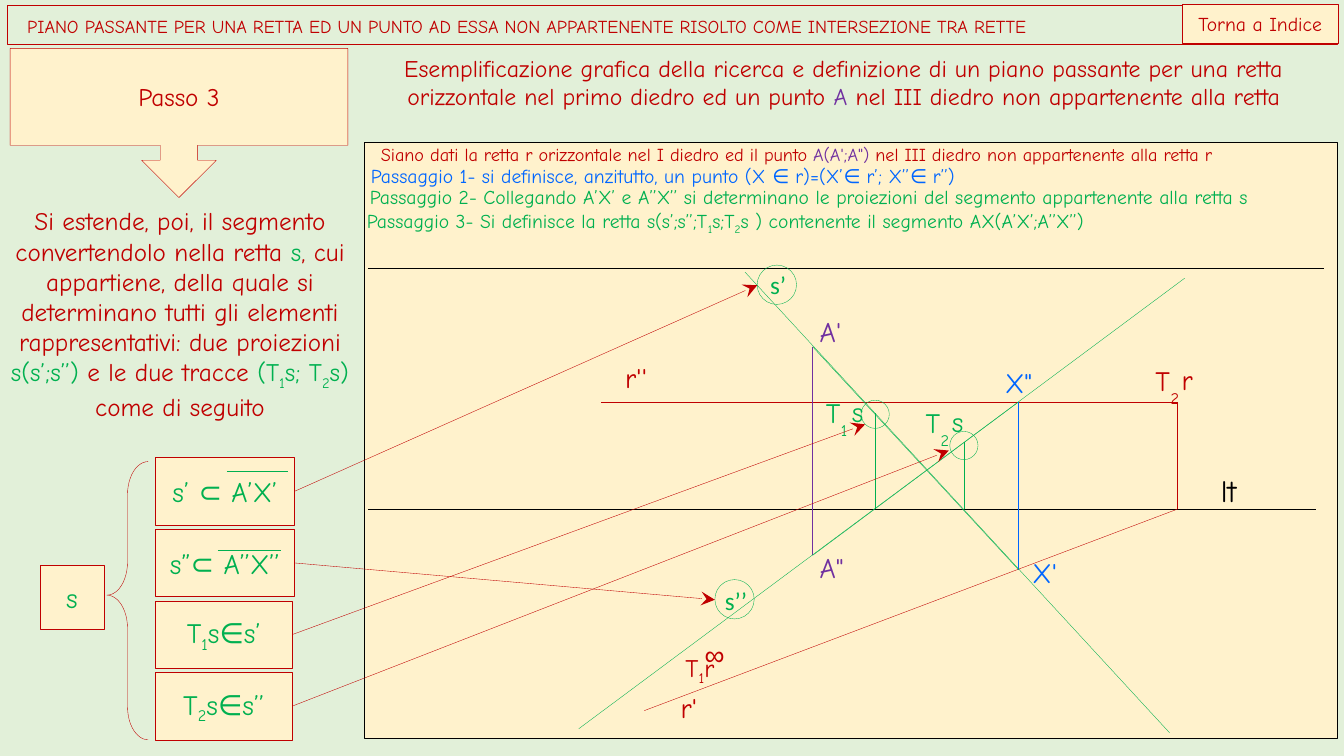
"""Build the slide on step 3 of the plane through a line and an external point."""
from dataclasses import dataclass

from lxml import etree
from pptx import Presentation
from pptx.dml.color import RGBColor
from pptx.enum.shapes import MSO_CONNECTOR, MSO_SHAPE
from pptx.enum.text import MSO_ANCHOR, MSO_AUTO_SIZE, PP_ALIGN
from pptx.oxml.ns import qn
from pptx.shapes.autoshape import Shape
from pptx.shapes.connector import Connector
from pptx.slide import Slide
from pptx.text.text import TextFrame
from pptx.util import Inches, Pt

RECTANGLE, ELLIPSE = MSO_SHAPE.RECTANGLE, MSO_SHAPE.OVAL
CALLOUT, BRACE = MSO_SHAPE.DOWN_ARROW_CALLOUT, MSO_SHAPE.LEFT_BRACE
STRAIGHT = MSO_CONNECTOR.STRAIGHT
LEFT, CENTER = PP_ALIGN.LEFT, PP_ALIGN.CENTER
MIDDLE, TOP = MSO_ANCHOR.MIDDLE, MSO_ANCHOR.TOP
NO_FIT, GROW = MSO_AUTO_SIZE.NONE, MSO_AUTO_SIZE.SHAPE_TO_FIT_TEXT
RIGHT_SIDE = 3


@dataclass(frozen=True)
class Theme:
    background: str = "E2F0D9"
    cream: str = "FFF2CC"
    red: str = "C00000"
    green: str = "00B050"
    purple: str = "7030A0"
    blue: str = "0066FF"
    black: str = "000000"
    font: str = "Comic Neue"
    circle_font: str = "Calibri"
    symbol_font: str = "Arial"
    heading: int = 13
    step: int = 14
    intro: int = 17
    body: int = 18
    label: int = 20
    ground: int = 22
    thin: float = 0.25
    overline: float = 0.5


THEME = Theme()


@dataclass(frozen=True)
class Run:
    text: str
    color: str
    subscript: bool = False


@dataclass(frozen=True)
class Text:
    left: float
    top: float
    width: float
    height: float
    runs: tuple[Run, ...]
    size: int
    align: PP_ALIGN = LEFT
    font: str = THEME.font


@dataclass(frozen=True)
class Label:
    left: float
    top: float
    width: float
    run: Run
    size: int = THEME.label
    font: str = THEME.font


@dataclass(frozen=True)
class Box:
    left: float
    top: float
    width: float
    height: float
    runs: tuple[Run, ...] = ()
    size: int = THEME.label
    kind: MSO_SHAPE = RECTANGLE
    fill: str | None = THEME.cream
    line: str = THEME.red
    space_after: int = 0


@dataclass(frozen=True)
class Line:
    start: tuple[float, float]
    end: tuple[float, float]
    color: str
    weight: float = THEME.thin


def indexed(pattern: str, color: str) -> tuple[Run, ...]:
    """Split text into runs, with the parts between underscores set as subscripts."""
    return tuple(Run(part, color, index % 2 == 1) for index, part in enumerate(pattern.split("_")))


def write_runs(frame: TextFrame, runs: tuple[Run, ...], size: int, font: str, align: PP_ALIGN) -> None:
    """Write the runs into the first paragraph of a frame."""
    paragraph = frame.paragraphs[0]
    paragraph.alignment = align
    for item in runs:
        run = paragraph.add_run()
        run.text = item.text
        run.font.size = Pt(size)
        run.font.name = font
        run.font.color.rgb = RGBColor.from_string(item.color)
        if item.subscript:
            run.font._element.set("baseline", "-25000")


def add_text(slide: Slide, text: Text) -> None:
    """Add a wrapping text box."""
    shape = slide.shapes.add_textbox(*map(Inches, (text.left, text.top, text.width, text.height)))
    frame = shape.text_frame
    frame.word_wrap = True
    frame.auto_size = GROW
    write_runs(frame, text.runs, text.size, text.font, text.align)


def add_label(slide: Slide, label: Label) -> None:
    """Add a short label without margins."""
    shape = slide.shapes.add_textbox(*map(Inches, (label.left, label.top, label.width, 0.34)))
    frame = shape.text_frame
    frame.margin_left = frame.margin_right = frame.margin_top = frame.margin_bottom = 0
    frame.word_wrap = False
    frame.auto_size = GROW
    frame.vertical_anchor = TOP
    write_runs(frame, (label.run,), label.size, label.font, LEFT)


def add_trace(slide: Slide, left: float, top: float, index: str, name: str, color: str) -> None:
    """Add a trace label made of T, a lowered index and the line name."""
    add_label(slide, Label(left, top, 0.19, Run("T", color)))
    add_label(slide, Label(left + 0.15, top + 0.06, 0.1, Run(index, color, True)))
    add_label(slide, Label(left + 0.26, top - 0.01, 0.14, Run(name, color)))


def outline(shape: Shape, fill: str | None, line: str) -> None:
    """Give a shape its fill and thin line."""
    if fill:
        shape.fill.solid()
        shape.fill.fore_color.rgb = RGBColor.from_string(fill)
    else:
        shape.fill.background()
    shape.line.color.rgb = RGBColor.from_string(line)
    shape.line.width = Pt(THEME.thin)


def add_box(slide: Slide, box: Box) -> Shape:
    """Add an outlined preset shape with centred text."""
    shape = slide.shapes.add_shape(box.kind, *map(Inches, (box.left, box.top, box.width, box.height)))
    shape.shadow.inherit = False
    outline(shape, box.fill, box.line)
    if box.runs:
        shape.text_frame.word_wrap = True
        shape.text_frame.vertical_anchor = MIDDLE
        write_runs(shape.text_frame, box.runs, box.size, THEME.font, CENTER)
        shape.text_frame.paragraphs[0].space_after = Pt(box.space_after)
    return shape


def add_line(slide: Slide, line: Line) -> Connector:
    """Add a straight line without shadow."""
    connector = slide.shapes.add_connector(STRAIGHT, *map(Inches, (*line.start, *line.end)))
    connector.line.color.rgb = RGBColor.from_string(line.color)
    connector.line.width = Pt(line.weight)
    etree.SubElement(connector._element.spPr, qn("a:effectLst"))
    return connector


def add_arrow(slide: Slide, source: Shape, end: tuple[float, float]) -> None:
    """Add an arrow from the right side of a box."""
    connector = add_line(slide, Line((0, 0), end, THEME.red))
    connector.begin_connect(source, RIGHT_SIDE)
    etree.SubElement(connector.line._get_or_add_ln(), qn("a:tailEnd"), type="stealth", w="lg", len="lg")


def add_header(slide: Slide) -> None:
    """Format the title and add the index button and the introduction."""
    title = slide.shapes.title
    title.left, title.top, title.width, title.height = map(Inches, (0.07, 0.05, 13.19, 0.39))
    outline(title, None, THEME.red)
    frame = title.text_frame
    frame.auto_size = NO_FIT
    frame.word_wrap = True
    frame.vertical_anchor = MIDDLE
    frame.margin_left, frame.margin_top = Inches(0.2), Inches(0.1)
    heading = "PIANO PASSANTE PER UNA RETTA ED UN PUNTO AD ESSA NON APPARTENENTE RISOLTO COME INTERSEZIONE TRA RETTE"
    write_runs(frame, (Run(heading, THEME.red),), THEME.heading, THEME.font, LEFT)
    frame.paragraphs[0].line_spacing = 0.9
    add_box(slide, Box(11.73, 0.04, 1.54, 0.39, (Run("Torna a Indice", THEME.red),), THEME.step))
    add_text(slide, Text(3.45, 0.48, 9.84, 0.67, (
        Run("Esemplificazione grafica della ricerca e definizione di un piano passante per una retta "
            "orizzontale nel primo diedro ed un punto ", THEME.red),
        Run("A ", THEME.purple),
        Run("nel III diedro non appartenente alla retta", THEME.red)), THEME.intro, CENTER))


def add_explanation(slide: Slide) -> list[Shape]:
    """Add the left column and return its four property boxes."""
    red, green = THEME.red, THEME.green
    add_box(slide, Box(0.1, 0.48, 3.35, 1.48, (Run("Passo 3", red),), THEME.body, CALLOUT))
    add_text(slide, Text(0, 1.99, 3.57, 2.52, (
        Run("Si estende, poi, il segmento convertendolo nella retta ", red), Run("s", green),
        Run(", cui appartiene, della quale si determinano tutti gli elementi rappresentativi: due proiezioni ", red),
        Run("s(s’;s’’) ", green), Run("e le due tracce ", red),
        *indexed("(T_1_s; T_2_s) ", green), Run("come di seguito", red)), THEME.body, CENTER))
    add_box(slide, Box(0.4, 5.61, 0.63, 0.63, (Run("s", green),), space_after=10))
    brace = add_box(slide, Box(1.06, 4.58, 0.41, 2.76, kind=BRACE, fill=None))
    brace.adjustments[0], brace.adjustments[1] = 0.8, 0.48
    properties = (("s’ ⊂ A’X’", 1.38), ("s”⊂ A’’X’’", 1.38), ("T_1_s∈s’", 1.36), ("T_2_s∈s’’", 1.36))
    boxes = [add_box(slide, Box(1.54, 4.54 + 0.71 * row, width, 0.67, indexed(pattern, green), space_after=10))
             for row, (pattern, width) in enumerate(properties)]
    for left, right, height in ((2.25, 2.86, 4.68), (2.16, 2.79, 5.46)):
        add_line(slide, Line((left, height), (right, height), green, THEME.overline))
    return boxes


def add_drawing(slide: Slide) -> None:
    """Add the panel with its steps, projections, labels and circles."""
    red, green, purple, blue, black = THEME.red, THEME.green, THEME.purple, THEME.blue, THEME.black
    add_box(slide, Box(3.61, 1.41, 9.65, 5.91, line=black))
    a_first, a_second, x_first, x_second = (8.06, 3.44), (8.06, 5.51), (10.1, 5.65), (10.1, 3.99)
    corner, ground = (11.68, 3.99), (11.68, 5.05)
    for line in (
        Line((3.65, 2.66), (13.13, 2.66), black), Line((3.65, 5.05), (13.05, 5.05), black),
        Line(corner, ground, red), Line(corner, (5.96, 3.99), red), Line(ground, (6.39, 7.05), red),
        Line(a_second, a_first, purple), Line(x_second, x_first, blue),
        Line(a_first, x_first, green), Line(a_second, x_second, green),
        Line((7.39, 2.7), (11.6, 7.27), green), Line((5.74, 7.23), (11.75, 2.76), green),
        Line((8.68, 5.05), (8.68, 4.1), green), Line((9.56, 5.05), (9.56, 4.39), green),
    ):
        add_line(slide, line)
    for label in (
        Label(12.11, 4.68, 0.35, Run("lt", black), THEME.ground),
        Label(8.13, 3.12, 0.31, Run("A'", purple)), Label(8.13, 5.46, 0.32, Run('A"', purple)),
        Label(6.75, 6.85, 0.24, Run("r'", red)), Label(6.2, 3.58, 0.35, Run("r''", red)),
        Label(10.24, 5.51, 0.31, Run("X'", blue)), Label(9.97, 3.63, 0.32, Run('X"', blue)),
        Label(6.99, 6.32, 0.2, Run("∞", red), font=THEME.symbol_font),
    ):
        add_label(slide, label)
    add_trace(slide, 11.46, 3.61, "2", "r", red)
    add_trace(slide, 9.18, 4.02, "2", "s", green)
    add_trace(slide, 8.19, 3.92, "1", "s", green)
    given = (Run("Siano dati la retta r orizzontale nel I diedro ed il punto ", red), Run("A(A';A\") ", purple),
             Run("nel III diedro non appartenente alla retta r", red))
    first = "Passaggio 1- si definisce, anzitutto, un punto (X ∈ r)=(X’∈ r’; X’’∈ r’’)"
    second = "Passaggio 2- Collegando A’X’ e A’’X’’ si determinano le proiezioni del segmento appartenente alla retta s"
    third = "Passaggio 3- Si definisce la retta s(s’;s’’;T_1_s;T_2_s ) contenente il segmento AX(A’X’;A’’X’’)"
    for text in (
        Text(3.68, 1.37, 9.45, 0.32, given, THEME.heading),
        Text(3.58, 1.58, 6.34, 0.34, (Run(first, blue),), THEME.step),
        Text(3.57, 1.79, 9.56, 0.34, (Run(second, green),), THEME.step),
        Text(3.54, 2.02, 8.07, 0.34, indexed(third, green), THEME.step),
        Text(6.7, 6.42, 0.6, 0.4, indexed("T_1_r", red), THEME.body),
        Text(7.54, 2.62, 0.54, 0.4, (Run("s’", green),), THEME.body, font=THEME.circle_font),
        Text(7.09, 5.76, 0.54, 0.4, (Run("s’’", green),), THEME.body, font=THEME.circle_font),
    ):
        add_text(slide, text)
    for left, top, size in ((7.51, 2.63, 0.39), (7.09, 5.75, 0.39), (8.54, 3.97, 0.28), (9.42, 4.28, 0.28)):
        add_box(slide, Box(left, top, size, size, kind=ELLIPSE, fill=None, line=green))


def main() -> None:
    """Build and save the presentation."""
    presentation = Presentation()
    presentation.slide_width, presentation.slide_height = Inches(13.33), Inches(7.5)
    slide = presentation.slides.add_slide(presentation.slide_layouts[5])
    slide.background.fill.solid()
    slide.background.fill.fore_color.rgb = RGBColor.from_string(THEME.background)
    add_header(slide)
    boxes = add_explanation(slide)
    add_drawing(slide)
    for box, end in zip(boxes, ((7.51, 2.83), (7.09, 5.95), (8.58, 4.21), (9.41, 4.47))):
        add_arrow(slide, box, end)
    presentation.save("out.pptx")


if __name__ == "__main__":
    main()
